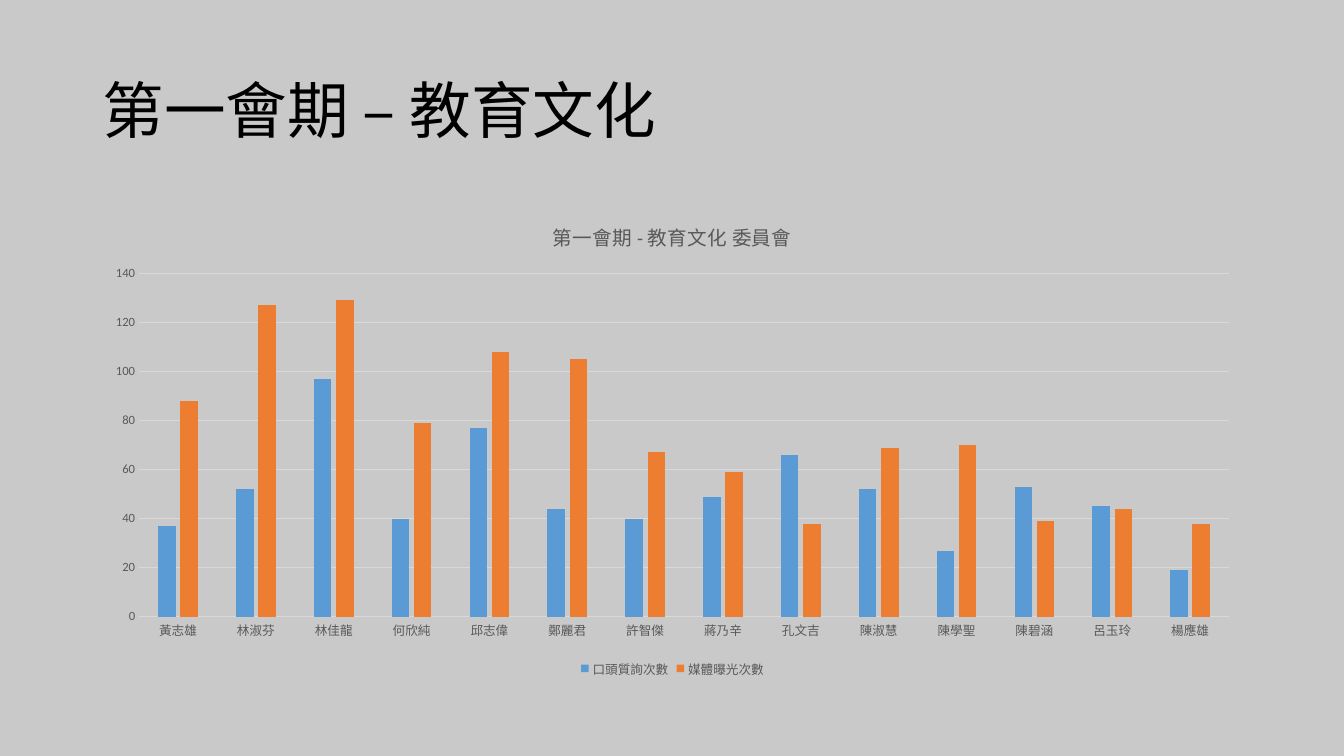
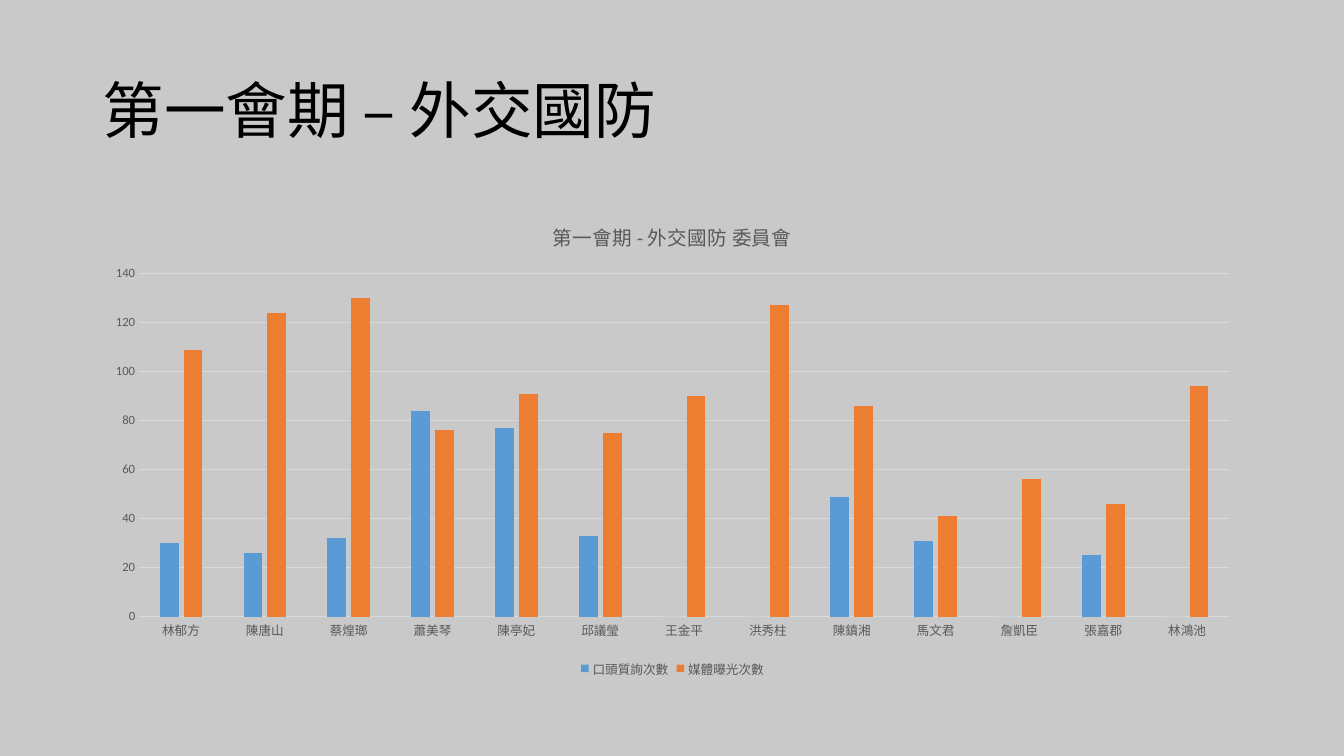
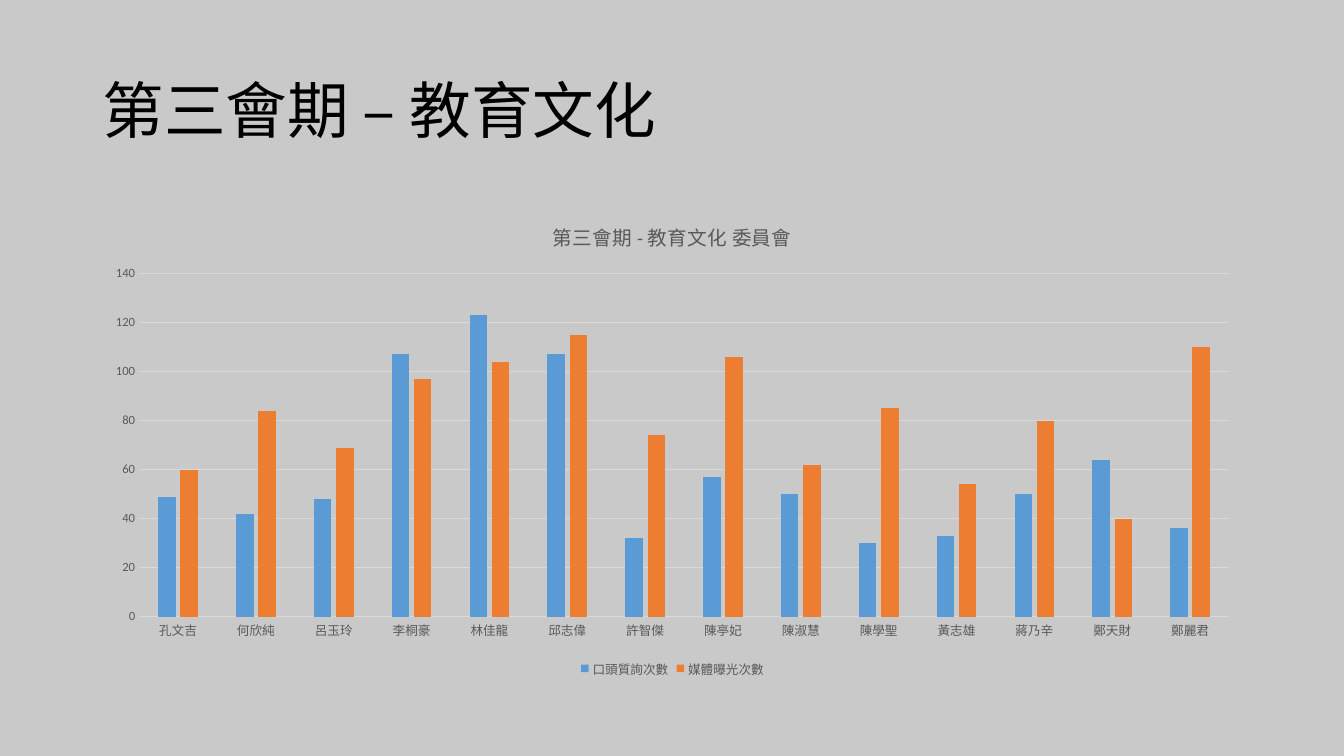
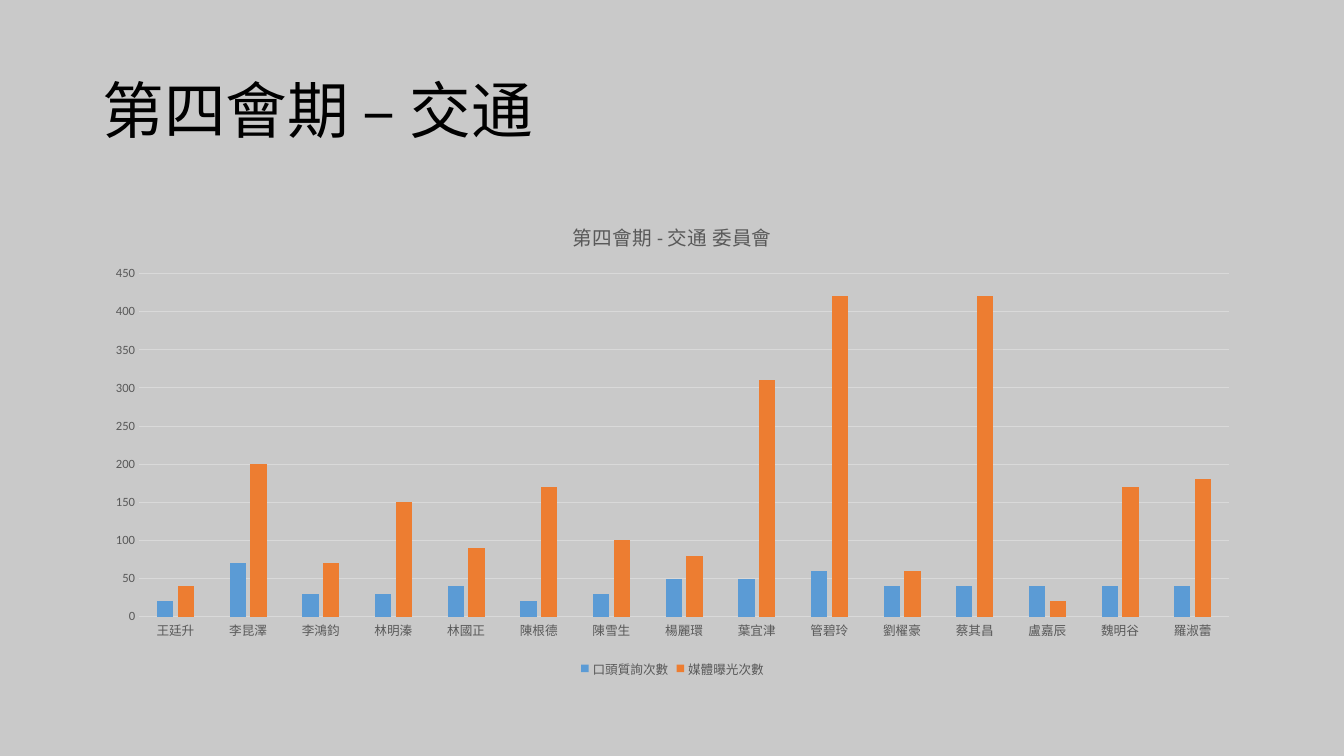
import pptx
import pptx.chart.data
import pptx.dml.color
import pptx.enum.chart
import pptx.enum.text
import pptx.oxml
import pptx.oxml.ns
import pptx.util

Inches = pptx.util.Inches
Pt = pptx.util.Pt

COLORS = {
    "background": "C9C9C9",
    "title": "000000",
    "label": "595959",
    "line": "D9D9D9",
    "questions": "5B9BD5",
    "exposure": "ED7D31",
}
TITLE_FONT = "Noto Sans CJK JP"
CHART_FONT = "Calibri"
TITLE_BOX = (0.92, 0.4, 11.5, 1.45)
CHART_BOX = (0.92, 2, 11.5, 4.76)
SERIES = (("口頭質詢次數", "questions"), ("媒體曝光次數", "exposure"))

COMMITTEES = [
    {
        "session": "第一會期",
        "committee": "教育文化",
        "members": "黃志雄 林淑芬 林佳龍 何欣純 邱志偉 鄭麗君 許智傑 蔣乃辛 孔文吉 陳淑慧 陳學聖 陳碧涵 呂玉玲 楊應雄",
        "questions": [37, 52, 97, 40, 77, 44, 40, 49, 66, 52, 27, 53, 45, 19],
        "exposure": [88, 127, 129, 79, 108, 105, 67, 59, 38, 69, 70, 39, 44, 38],
    },
    {
        "session": "第一會期",
        "committee": "外交國防",
        "members": "林郁方 陳唐山 蔡煌瑯 蕭美琴 陳亭妃 邱議瑩 王金平 洪秀柱 陳鎮湘 馬文君 詹凱臣 張嘉郡 林鴻池",
        "questions": [30, 26, 32, 84, 77, 33, 0, 0, 49, 31, 0, 25, 0],
        "exposure": [109, 124, 130, 76, 91, 75, 90, 127, 86, 41, 56, 46, 94],
    },
    {
        "session": "第三會期",
        "committee": "教育文化",
        "members": "孔文吉 何欣純 呂玉玲 李桐豪 林佳龍 邱志偉 許智傑 陳亭妃 陳淑慧 陳學聖 黃志雄 蔣乃辛 鄭天財 鄭麗君",
        "questions": [49, 42, 48, 107, 123, 107, 32, 57, 50, 30, 33, 50, 64, 36],
        "exposure": [60, 84, 69, 97, 104, 115, 74, 106, 62, 85, 54, 80, 40, 110],
    },
    {
        "session": "第四會期",
        "committee": "交通",
        "members": "王廷升 李昆澤 李鴻鈞 林明溱 林國正 陳根德 陳雪生 楊麗環 葉宜津 管碧玲 劉櫂豪 蔡其昌 盧嘉辰 魏明谷 羅淑蕾",
        "questions": [20, 70, 30, 30, 40, 20, 30, 50, 50, 60, 40, 40, 40, 40, 40],
        "exposure": [40, 200, 70, 150, 90, 170, 100, 80, 310, 420, 60, 420, 20, 170, 180],
    },
]


def color(name):
    return pptx.dml.color.RGBColor.from_string(COLORS[name])


def fill_solid(fill, name):
    fill.solid()
    fill.fore_color.rgb = color(name)


def style_font(font, size, name, typeface):
    font.size = Pt(size)
    font.bold = False
    font.name = typeface
    font.color.rgb = color(name)


def style_line(line, name):
    line.width = Pt(0.75)
    line.color.rgb = color(name)


def add_title(slide, box, text):
    shape = slide.shapes.add_textbox(*map(Inches, box))
    frame = shape.text_frame
    frame.word_wrap = True
    frame.vertical_anchor = pptx.enum.text.MSO_ANCHOR.MIDDLE
    frame.text = text
    paragraph = frame.paragraphs[0]
    paragraph.line_spacing = 0.9
    run = paragraph.runs[0]
    style_font(run.font, 44, "title", TITLE_FONT)
    east_asian = pptx.oxml.parse_xml(
        f'<a:ea {pptx.oxml.ns.nsdecls("a")} typeface="{TITLE_FONT}"/>'
    )
    run.font._element.find(pptx.oxml.ns.qn("a:latin")).addnext(east_asian)


def style_axis(axis):
    axis.major_tick_mark = pptx.enum.chart.XL_TICK_MARK.NONE
    axis.minor_tick_mark = pptx.enum.chart.XL_TICK_MARK.NONE
    style_font(axis.tick_labels.font, 9, "label", CHART_FONT)


def add_committee_chart(slide, box, data):
    chart_data = pptx.chart.data.CategoryChartData()
    chart_data.categories = data["members"].split()
    for name, key in SERIES:
        chart_data.add_series(name, data[key])
    chart = slide.shapes.add_chart(
        pptx.enum.chart.XL_CHART_TYPE.COLUMN_CLUSTERED, *map(Inches, box), chart_data
    ).chart
    style_font(chart.font, 10, "title", CHART_FONT)

    chart.has_title = True
    title = chart.chart_title
    title.include_in_layout = False
    paragraph = title.text_frame.paragraphs[0]
    paragraph.text = f'{data["session"]} - {data["committee"]} 委員會'
    style_font(paragraph.runs[0].font, 14, "label", CHART_FONT)

    style_axis(chart.category_axis)
    style_line(chart.category_axis.format.line, "line")
    style_axis(chart.value_axis)
    chart.value_axis.format.line.fill.background()
    chart.value_axis.has_major_gridlines = True
    style_line(chart.value_axis.major_gridlines.format.line, "line")

    chart.has_legend = True
    chart.legend.position = pptx.enum.chart.XL_LEGEND_POSITION.BOTTOM
    chart.legend.include_in_layout = False
    style_font(chart.legend.font, 9, "label", CHART_FONT)

    plot = chart.plots[0]
    plot.gap_width = 219
    plot.overlap = -27
    plot.vary_by_categories = False
    for series, (_, key) in zip(plot.series, SERIES):
        fill_solid(series.format.fill, key)


def add_committee_slide(presentation, data):
    slide = presentation.slides.add_slide(presentation.slide_layouts[6])
    add_title(slide, TITLE_BOX, f'{data["session"]} – {data["committee"]}')
    add_committee_chart(slide, CHART_BOX, data)


def main():
    presentation = pptx.Presentation()
    presentation.slide_width = Inches(13.33)
    presentation.slide_height = Inches(7.5)
    fill_solid(presentation.slide_master.background.fill, "background")
    for data in COMMITTEES:
        add_committee_slide(presentation, data)
    presentation.save("out.pptx")


if __name__ == "__main__":
    main()
